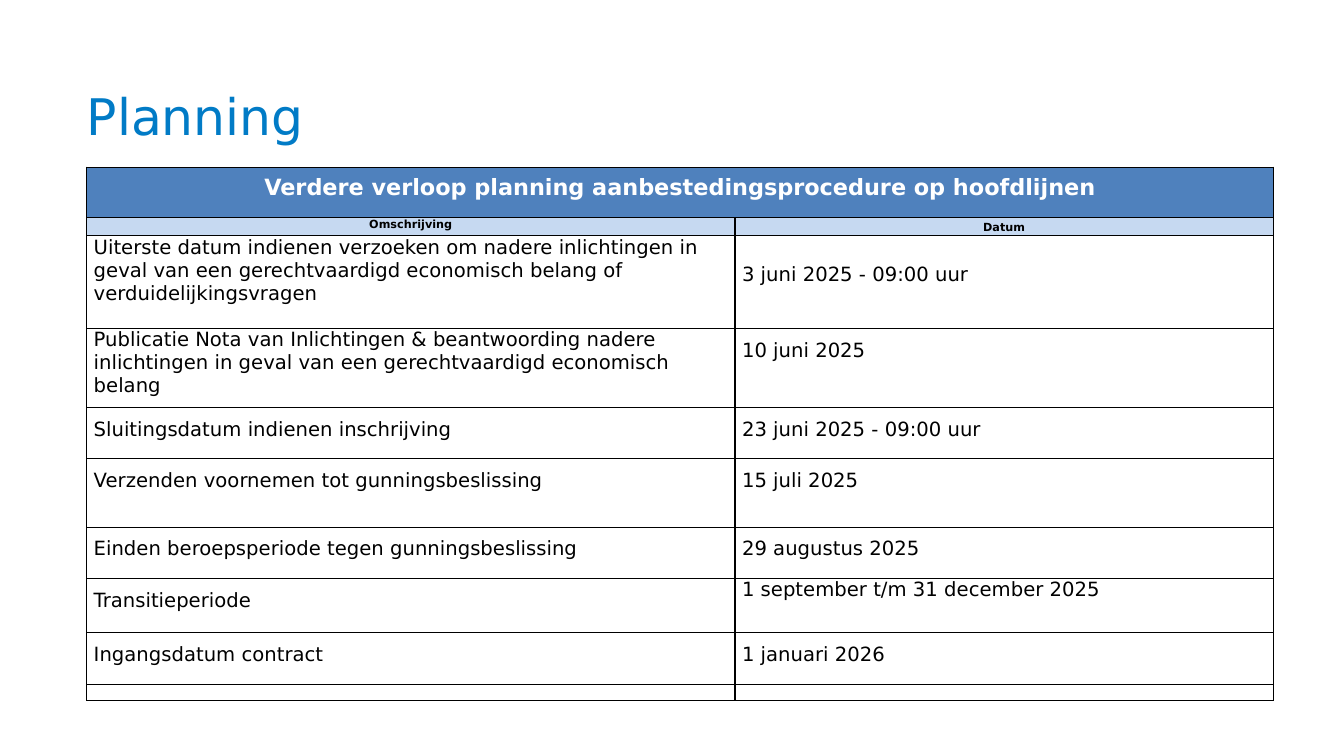
from lxml import etree
from pptx import Presentation
from pptx import util as u
from pptx.dml.color import RGBColor
from pptx.enum import text
from pptx.oxml.ns import qn

PX = 9144  # EMU, 100 px to the inch
FONT = "DejaVu Sans"
LINE = 12  # points, fixed line pitch
COLORS = {"title": "017BC6", "head": "4F81BD", "sub": "C6D9F1",
          "white": "FFFFFF", "black": "000000"}
COLS = [643, 534]
HEAD = "Verdere verloop planning aanbestedingsprocedure op hoofdlijnen"

# Row height, then (text, lines left free above) per cell; None is natural pitch
STEPS = [
    (92, ("Uiterste datum indienen verzoeken om nadere inlichtingen in geval van "
          "een gerechtvaardigd economisch belang of verduidelijkingsvragen", None),
     ("3 juni 2025 - 09:00 uur", 2)),
    (78, ("Publicatie Nota van Inlichtingen & beantwoording nadere inlichtingen "
          "in geval van een gerechtvaardigd economisch belang", None),
     ("10 juni 2025", 1)),
    (51, ("Sluitingsdatum indienen inschrijving", 1), ("23 juni 2025 - 09:00 uur", 1)),
    (68, ("Verzenden voornemen tot gunningsbeslissing", 1), ("15 juli 2025", 1)),
    (51, ("Einden beroepsperiode tegen gunningsbeslissing", 1), ("29 augustus 2025", 1)),
    (54, ("Transitieperiode", 1), ("1 september t/m 31 december 2025", None)),
    (51, ("Ingangsdatum contract", 1), ("1 januari 2026", 1)),
]


def px(n):
    return u.Emu(n * PX)


def rgb(name):
    return RGBColor.from_string(COLORS[name])


def style(par, size, color, bold=False):
    font = par.font
    font.name, font.size, font.bold = FONT, u.Pt(size), bold
    font.color.rgb = rgb(color)


def frame(cell):
    """Draw a thin black border on all four sides, ahead of the cell fill."""
    props = cell._tc.get_or_add_tcPr()
    for i, side in enumerate(("lnL", "lnR", "lnT", "lnB")):
        line = etree.Element(qn("a:" + side), w=str(u.Pt(1)))
        fill = etree.SubElement(line, qn("a:solidFill"))
        etree.SubElement(fill, qn("a:srgbClr"), val=COLORS["black"])
        props.insert(i, line)


def fill_cell(cell, words, size, lead=None, fill=None, color="black", head=False):
    cell.margin_left = cell.margin_right = px(7)
    cell.margin_top = u.Pt(LINE * (lead or 0))
    cell.margin_bottom = 0
    cell.vertical_anchor = text.MSO_ANCHOR.TOP
    if fill:
        cell.fill.solid()
        cell.fill.fore_color.rgb = rgb(fill)
    else:
        cell.fill.background()
    frame(cell)
    par = cell.text_frame.paragraphs[0]
    par.alignment = text.PP_ALIGN.CENTER if head else text.PP_ALIGN.LEFT
    if lead is not None:
        par.line_spacing = u.Pt(LINE)
    style(par, size, color, head)
    if words:
        par.add_run().text = words
    else:
        etree.SubElement(par._p, qn("a:endParaRPr"), sz=str(size * 100))


def add_title(slide, x, y, w, h):
    box = slide.shapes.add_textbox(px(x), px(y), px(w), px(h))
    body = box.text_frame
    body.word_wrap = True
    body.margin_left = body.margin_right = body.margin_top = body.margin_bottom = 0
    par = body.paragraphs[0]
    par.line_spacing = 0.9
    style(par, 36, "title")
    par.add_run().text = "Planning"


def add_plan(slide, x, y):
    highs = [50, 18] + [step[0] for step in STEPS] + [16]
    shape = slide.shapes.add_table(len(highs), len(COLS), px(x), px(y),
                                   px(sum(COLS)), px(sum(highs)))
    table = shape.table
    table.first_row = table.horz_banding = False
    for col, wide in zip(table.columns, COLS):
        col.width = px(wide)
    for row, high in zip(table.rows, highs):
        row.height = px(high)

    table.cell(0, 0).merge(table.cell(0, 1))
    fill_cell(table.cell(0, 0), HEAD, 16, 1, "head", "white", True)
    frame(table.cell(0, 1))
    fill_cell(table.cell(1, 0), "Omschrijving", 8, None, "sub", head=True)
    fill_cell(table.cell(1, 1), "Datum", 8, 0, "sub", head=True)
    for r, (_, *cells) in enumerate(STEPS, 2):
        for c, (words, lead) in enumerate(cells):
            fill_cell(table.cell(r, c), words, 14, lead)
    for c in range(len(COLS)):
        fill_cell(table.cell(len(highs) - 1, c), "", 8)


def main():
    deck = Presentation()
    deck.slide_width, deck.slide_height = px(1333), px(750)
    slide = deck.slides.add_slide(deck.slide_layouts[6])
    add_title(slide, 86, 91, 1195, 104)
    add_plan(slide, 86, 166)
    deck.save("out.pptx")


if __name__ == "__main__":
    main()
